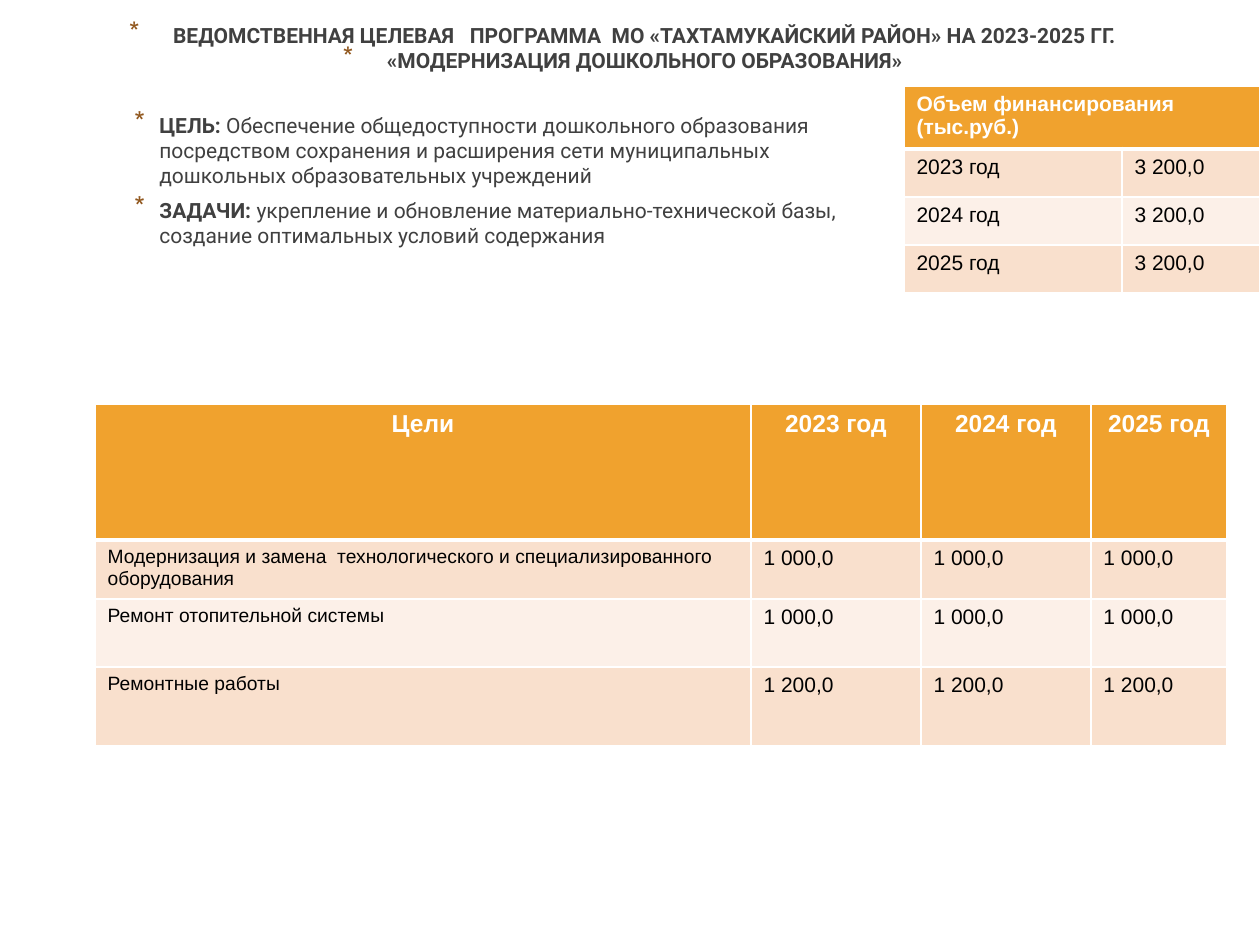
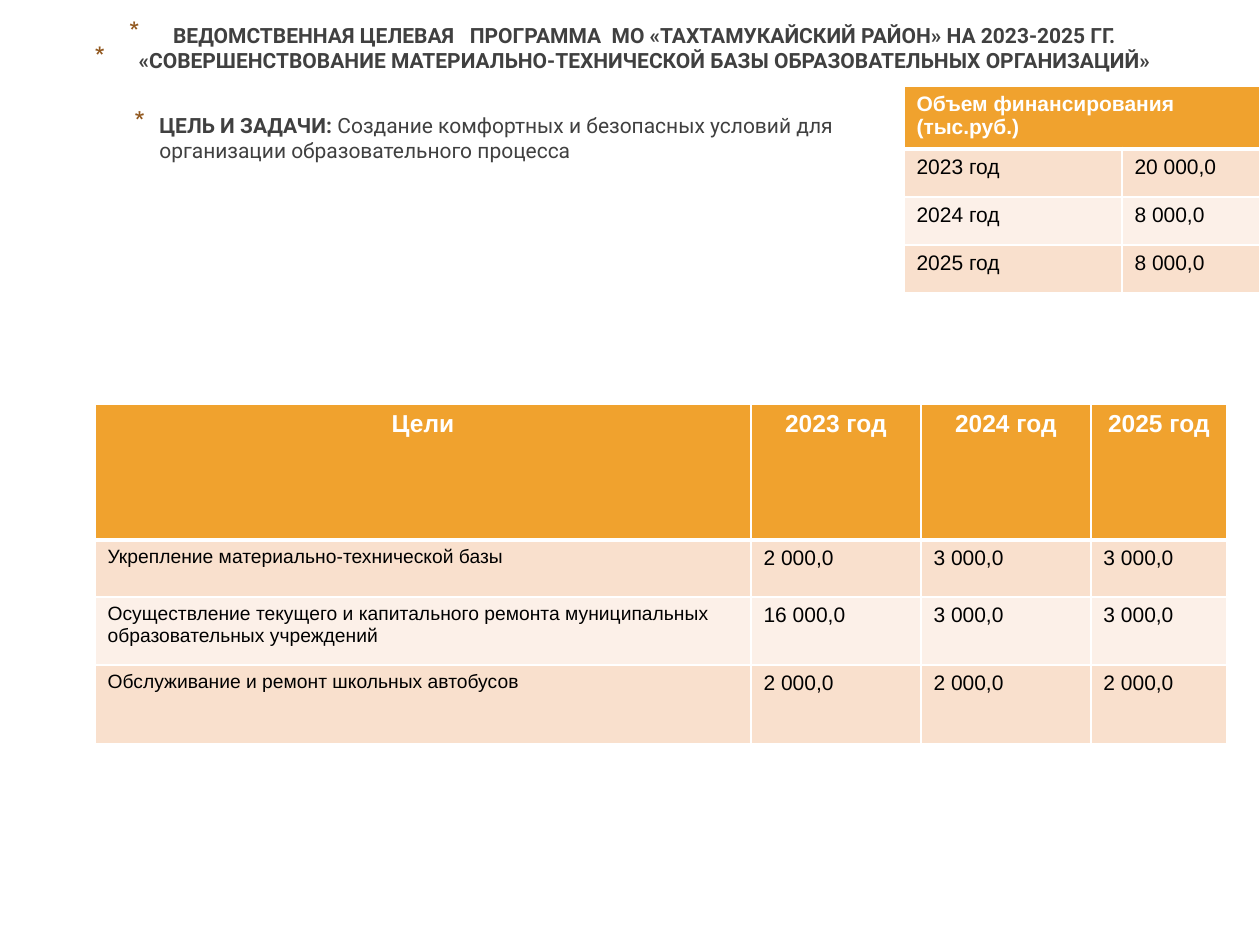
from lxml import etree
from pptx import Presentation, util as u
from pptx.dml.color import RGBColor
from pptx.enum import text
from pptx.oxml.ns import qn

PX = 914400 / 126
WHITE = RGBColor(0xFF, 0xFF, 0xFF)
BLACK = RGBColor(0, 0, 0)
GREY = RGBColor(0x40, 0x40, 0x40)
BROWN = RGBColor(0x91, 0x58, 0x1F)
ORANGE = RGBColor(0xF0, 0xA2, 0x2E)
BANDS = [RGBColor(0xF9, 0xE0, 0xCD), RGBColor(0xFC, 0xF0, 0xE8)]

YEARS = ["2023 год", "2024 год", "2025 год"]
TITLE = "ВЕДОМСТВЕННАЯ ЦЕЛЕВАЯ   ПРОГРАММА  МО «ТАХТАМУКАЙСКИЙ РАЙОН» НА 2023-2025 ГГ. "
PROGRAMMES = [
    {
        "name": "«МОДЕРНИЗАЦИЯ ДОШКОЛЬНОГО ОБРАЗОВАНИЯ» ",
        "aims": [
            ("ЦЕЛЬ: ", "Обеспечение общедоступности дошкольного образования посредством "
             "сохранения и расширения сети муниципальных дошкольных образовательных учреждений"),
            ("ЗАДАЧИ: ", "укрепление и обновление материально-технической базы, "
             "создание оптимальных условий содержания"),
        ],
        "funding": ["3 200,0", "3 200,0", "3 200,0"],
        "goals": [
            ["Модернизация и замена  технологического и специализированного оборудования",
             "1 000,0", "1 000,0", "1 000,0"],
            ["Ремонт отопительной системы", "1 000,0", "1 000,0", "1 000,0"],
            ["Ремонтные работы", "1 200,0", "1 200,0", "1 200,0"],
        ],
    },
    {
        "name": "«СОВЕРШЕНСТВОВАНИЕ МАТЕРИАЛЬНО-ТЕХНИЧЕСКОЙ БАЗЫ ОБРАЗОВАТЕЛЬНЫХ ОРГАНИЗАЦИЙ» ",
        "aims": [
            ("ЦЕЛЬ И ЗАДАЧИ: ", "Создание комфортных и безопасных условий для "
             "организации образовательного процесса"),
        ],
        "funding": ["20 000,0", "8 000,0", "8 000,0"],
        "goals": [
            ["Укрепление материально-технической базы", "2 000,0", "3 000,0", "3 000,0"],
            ["Осуществление текущего и капитального ремонта муниципальных "
             "образовательных учреждений", "16 000,0", "3 000,0", "3 000,0"],
            ["Обслуживание и ремонт школьных автобусов", "2 000,0", "2 000,0", "2 000,0"],
        ],
    },
]


def add_bullets(s, box, paragraphs, indent, hang, size_pct, fmt):
    """Text box of starred paragraphs, each a list of (text, bold) runs."""
    tf = s.shapes.add_textbox(*[round(v * PX) for v in box]).text_frame
    tf.word_wrap = True
    for i, runs in enumerate(paragraphs):
        p = tf.paragraphs[0] if i == 0 else tf.add_paragraph()
        pPr = p._p.get_or_add_pPr()
        pPr.set("marL", str(round(indent * PX)))
        pPr.set("indent", str(round(-hang * PX)))
        clr = etree.SubElement(pPr, qn("a:buClr"))
        etree.SubElement(clr, qn("a:srgbClr"), val=str(BROWN))
        etree.SubElement(pPr, qn("a:buSzPct"), val=str(size_pct * 1000))
        etree.SubElement(pPr, qn("a:buChar"), char="*")
        for key, value in fmt.items():
            if i or key != "space_before":
                setattr(p, key, value)
        for words, bold in runs:
            r = p.add_run()
            r.text = words
            for key, value in {"name": "Roboto", "size": u.Pt(12), "bold": bold}.items():
                setattr(r.font, key, value)
            r.font.color.rgb = GREY


def add_banded_table(s, left, top, widths, heights, rows, head_size, label_size, head_align):
    """Table with an orange heading row, banded rows and white rules."""
    frame = s.shapes.add_table(len(rows), len(widths), *[
        round(v * PX) for v in (left, top, sum(widths), sum(heights))])
    table = frame.table
    for col, width in zip(table.columns, widths):
        col.width = round(width * PX)
    for row, height in zip(table.rows, heights):
        row.height = round(height * PX)
    for i, row in enumerate(rows):
        for j, words in enumerate(row):
            cell = table.cell(i, j)
            head = i == 0
            tcPr = cell._tc.get_or_add_tcPr()
            for side in ("lnL", "lnR", "lnT", "lnB"):
                thick = (i, side) in ((0, "lnB"), (1, "lnT"))
                ln = etree.SubElement(tcPr, qn("a:" + side), w=str(u.Pt(3 if thick else 1)))
                fill = etree.SubElement(ln, qn("a:solidFill"))
                etree.SubElement(fill, qn("a:srgbClr"), val=str(WHITE))
            cell.fill.solid()
            cell.fill.fore_color.rgb = ORANGE if head else BANDS[(i - 1) % 2]
            if not words:
                continue
            p = cell.text_frame.paragraphs[0]
            p.alignment = head_align if head else text.PP_ALIGN.LEFT
            r = p.add_run()
            r.text = words
            size = head_size if head else label_size if j == 0 else 12
            for key, value in {"name": "Arial", "size": u.Pt(size), "bold": head}.items():
                setattr(r.font, key, value)
            r.font.color.rgb = WHITE if head else BLACK
    return table


prs = Presentation()
prs.slide_width, prs.slide_height = round(1260 * PX), round(945 * PX)

for prog in PROGRAMMES:
    s = prs.slides.add_slide(prs.slide_layouts[6])

    # Title
    add_bullets(s, (35, 16, 1181, 89), [[(TITLE, True)], [(prog["name"], True)]],
                44, 44, 128, {"alignment": text.PP_ALIGN.CENTER})

    # Funding by year
    funding = [["Объем финансирования (тыс.руб.)", ""], *zip(YEARS, prog["funding"])]
    table = add_banded_table(s, 904, 86, [218, 138], [59, 48, 48, 48], funding,
                             12, 12, text.PP_ALIGN.LEFT)
    table.cell(0, 0).merge(table.cell(0, 1))

    # Aims and tasks
    aims = [[(label, True), (words, False)] for label, words in prog["aims"]]
    add_bullets(s, (115, 106, 784, 297), aims, 32, 25, 130,
                {"space_before": u.Pt(2.4), "space_after": u.Pt(3)})

    # Goals by year
    add_banded_table(s, 95, 404, [656, 170, 170, 136], [136, 57, 68, 79],
                     [["Цели", *YEARS], *prog["goals"]], 14, 11, text.PP_ALIGN.CENTER)

prs.save("out.pptx")
